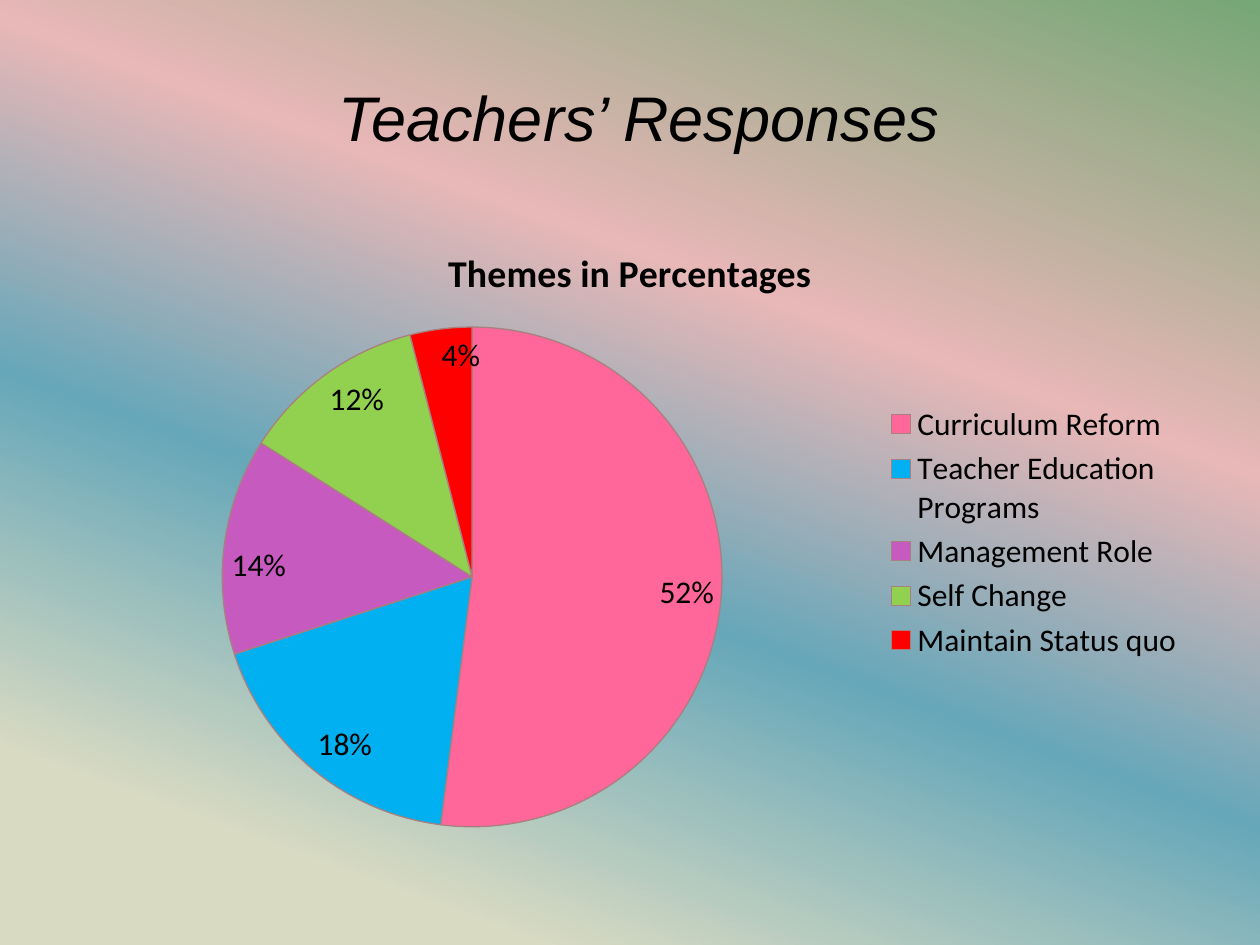
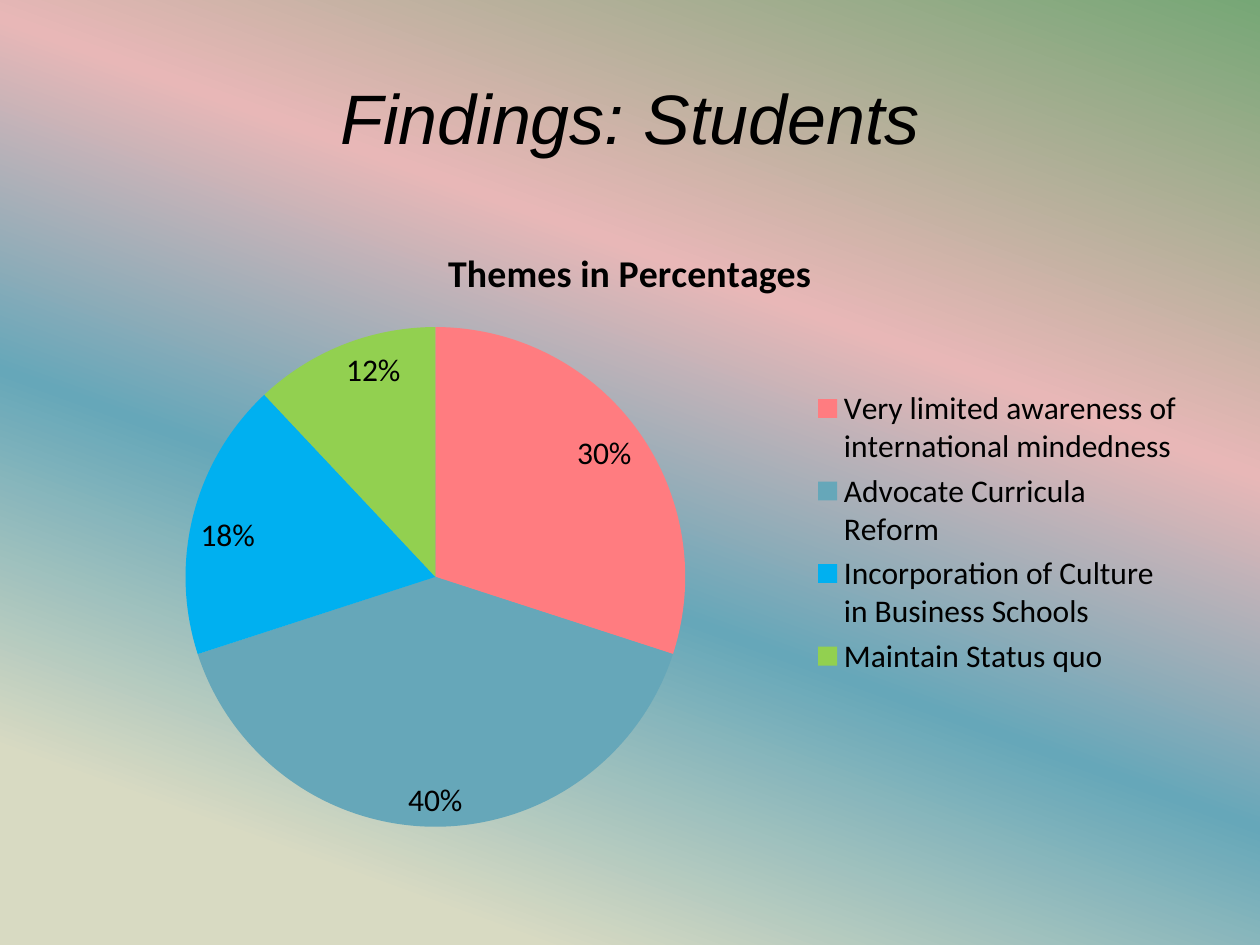
"""Two slides with pie charts of the themes in teachers' and students' responses."""
from lxml import etree
from pptx import Presentation
from pptx.chart.data import CategoryChartData
from pptx.dml.color import RGBColor
from pptx.enum.chart import XL_CHART_TYPE, XL_LABEL_POSITION, XL_LEGEND_POSITION
from pptx.enum.text import MSO_ANCHOR, PP_ALIGN
from pptx.oxml.ns import qn
from pptx.util import Inches, Pt

PIE = XL_CHART_TYPE.PIE
INSIDE_END = XL_LABEL_POSITION.INSIDE_END
RIGHT = XL_LEGEND_POSITION.RIGHT
MIDDLE = MSO_ANCHOR.MIDDLE
CENTER = PP_ALIGN.CENTER
TITLE_ONLY = 5

COLORS = {
    "text": "000000", "outline": "A88080",
    "green": "76A776", "blush": "E8B7B7", "teal": "66A7B9", "cream": "D8DAC2",
    "pink": "FF6699", "coral": "FF7C80", "blue": "00B0F0",
    "purple": "C65ABE", "lime": "92D050", "red": "FF0000",
}
BACKDROP = [(0, "green"), (34, "blush"), (59, "teal"), (86, "cream")]
TITLE_FONT = {"name": "Arial", "italic": True, "bold": False}
CHART_FONT = {"name": "Calibri", "size": Pt(18), "bold": False}
HEADING_FONT = {"name": "Calibri", "size": Pt(21.6), "bold": True}

FINDINGS = [
    {"title": " Teachers’ Responses", "size": 36, "outlined": True, "themes": [
        ("Curriculum Reform", 0.52, "pink"),
        ("Teacher Education Programs", 0.18, "blue"),
        ("Management Role", 0.14, "purple"),
        ("Self Change", 0.12, "lime"),
        ("Maintain Status quo", 0.04, "red")]},
    {"title": "Findings: Students", "size": 40, "outlined": False, "themes": [
        ("Very limited awareness of international mindedness", 0.3, "coral"),
        ("Advocate Curricula Reform", 0.4, "teal"),
        ("Incorporation of Culture in Business Schools", 0.18, "blue"),
        ("Maintain Status quo", 0.12, "lime")]},
]


def rgb(name):
    return RGBColor.from_string(COLORS[name])


def style(font, values):
    for attribute, value in values.items():
        setattr(font, attribute, value)
    font.color.rgb = rgb("text")


prs = Presentation()
prs.slide_width, prs.slide_height = Inches(10), Inches(7.5)
W, H = prs.slide_width, prs.slide_height
margin, content_width = int(W * 0.05), int(W * 0.9)

backdrop = prs.slide_master.background.fill
backdrop.gradient()
backdrop.gradient_angle = 250
stops = prs.slide_master.element.find(".//" + qn("a:gsLst"))
for stop in list(stops):
    stops.remove(stop)
for percent, name in BACKDROP:
    stop = etree.SubElement(stops, qn("a:gs"), pos=str(percent * 1000))
    etree.SubElement(stop, qn("a:srgbClr"), val=COLORS[name])

for finding in FINDINGS:
    slide = prs.slides.add_slide(prs.slide_layouts[TITLE_ONLY])
    title = slide.shapes.title
    title.left, title.top = margin, int(H * 0.04)
    title.width, title.height = content_width, int(H / 6)
    title.text_frame.text = finding["title"]
    title.text_frame.vertical_anchor = MIDDLE
    heading = title.text_frame.paragraphs[0]
    heading.alignment = CENTER
    style(heading.runs[0].font, TITLE_FONT | {"size": Pt(finding["size"])})

    names, shares, fills = zip(*finding["themes"])
    data = CategoryChartData(number_format="0%")
    data.categories = names
    data.add_series("Series 1", shares)
    chart = slide.shapes.add_chart(
        PIE, margin, int(H * 7 / 30), content_width, int(H * 0.66), data).chart
    style(chart.font, CHART_FONT)

    chart.has_title = True
    chart.chart_title.include_in_layout = False
    chart.chart_title.text_frame.text = " Themes in Percentages "
    style(chart.chart_title.text_frame.paragraphs[0].runs[0].font, HEADING_FONT)

    chart.has_legend = True
    chart.legend.position = RIGHT
    chart.legend.include_in_layout = False
    style(chart.legend.font, CHART_FONT)

    pie = chart.plots[0]
    pie.vary_by_categories = True
    pie.has_data_labels = True
    labels = pie.data_labels
    label_format = {"show_value": True, "show_percentage": False, "number_format": "0%",
                    "number_format_is_linked": False, "position": INSIDE_END}
    for attribute, value in label_format.items():
        setattr(labels, attribute, value)
    style(labels.font, CHART_FONT)

    for index, fill in enumerate(fills):
        wedge = pie.series[0].points[index].format
        wedge.fill.solid()
        wedge.fill.fore_color.rgb = rgb(fill)
        if finding["outlined"]:
            wedge.line.color.rgb = rgb("outline")
            wedge.line.width = Pt(0.75)
        else:
            wedge.line.fill.background()

prs.save("out.pptx")
